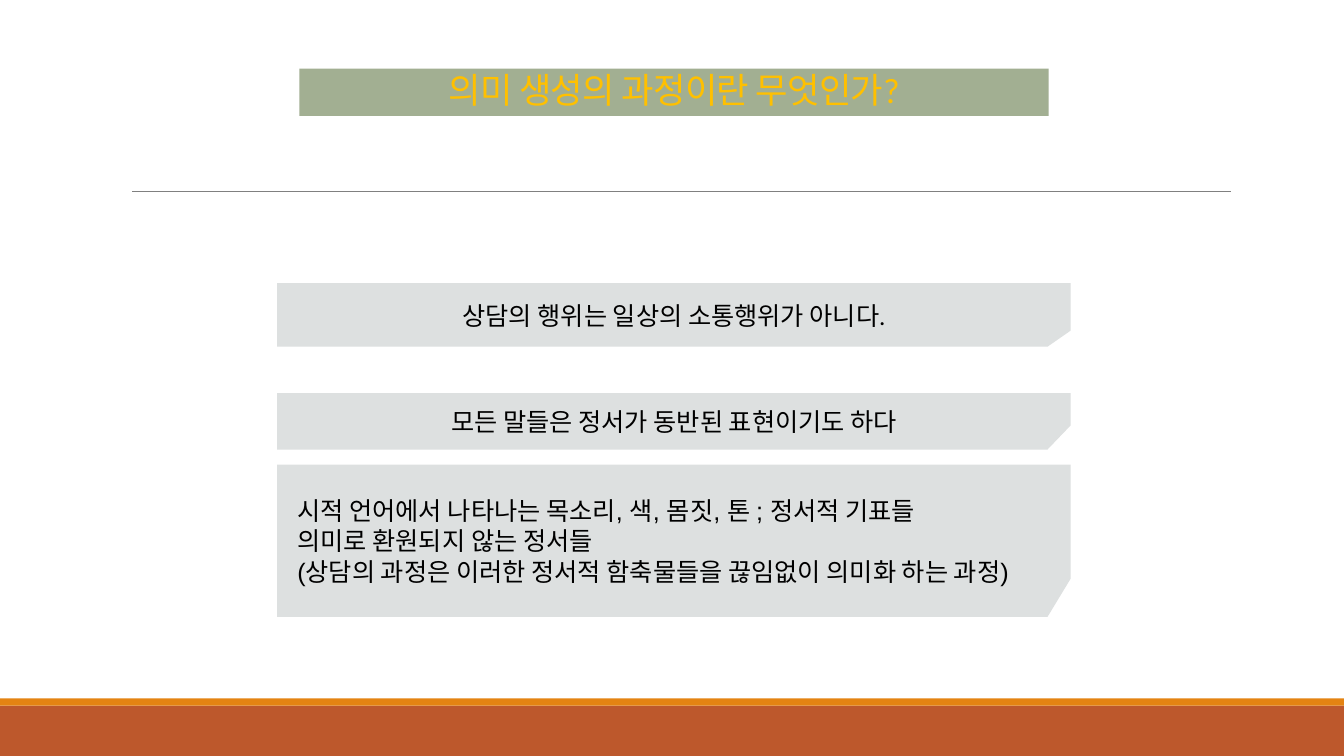
from pptx import Presentation
from pptx.dml.color import RGBColor
from pptx.enum.shapes import MSO_CONNECTOR, MSO_SHAPE
from pptx.enum.text import MSO_ANCHOR, MSO_AUTO_SIZE, PP_ALIGN
from pptx.oxml.ns import qn
from pptx.util import Inches, Pt
from lxml import etree

RECTANGLE = MSO_SHAPE.RECTANGLE
STRAIGHT = MSO_CONNECTOR.STRAIGHT
LEFT, CENTER = PP_ALIGN.LEFT, PP_ALIGN.CENTER
MIDDLE, BOTTOM = MSO_ANCHOR.MIDDLE, MSO_ANCHOR.BOTTOM
NO_AUTOFIT = MSO_AUTO_SIZE.NONE

COLORS = {
    "footer": "BD582C",
    "accent": "E48312",
    "rule": "808080",
    "title_fill": "A2AF92",
    "title_text": "FFC000",
    "panel": "DDE0E0",
    "text": "000000",
}
SLIDE_WIDTH, SLIDE_HEIGHT = 13.33, 7.5
PANEL_LEFT, PANEL_WIDTH, CORNER_WIDTH = 2.75, 7.87, 0.23

# Top, height, corner height, alignment, font, text
PANELS = [
    (2.81, 0.63, 0.16, CENTER, "Calibri", "상담의 행위는 일상의 소통행위가 아니다."),
    (3.9, 0.56, 0.24, CENTER, "Calibri", "모든 말들은 정서가 동반된 표현이기도 하다"),
    (4.61, 1.51, 0.38, LEFT, "Arial",
     "시적 언어에서 나타나는 목소리, 색, 몸짓, 톤 ; 정서적 기표들\n"
     "의미로 환원되지 않는 정서들\n"
     "(상담의 과정은 이러한 정서적 함축물들을 끊임없이 의미화 하는 과정)"),
]


def color(name):
    return RGBColor.from_string(COLORS[name])


def fill_plain(shape, name):
    shape.fill.solid()
    shape.fill.fore_color.rgb = color(name)
    shape.line.fill.background()
    shape.shadow.inherit = False


def write_text(shape, text, font_name, size, color_name, alignment, anchor, insets):
    frame = shape.text_frame
    frame.text = text
    frame.word_wrap = True
    frame.auto_size = NO_AUTOFIT
    frame.vertical_anchor = anchor
    frame.margin_left = frame.margin_right = Inches(insets[0])
    frame.margin_top = frame.margin_bottom = Inches(insets[1])
    for paragraph in frame.paragraphs:
        paragraph.alignment = alignment
        for run in paragraph.runs:
            run.font.name = font_name
            run.font.size = Pt(size)
            run.font.color.rgb = color(color_name)


def add_footer(slide, top, height, accent_height):
    bands = [(top, height, "footer"), (top - accent_height, accent_height, "accent")]
    for band_top, band_height, name in bands:
        band = slide.shapes.add_shape(
            RECTANGLE, 0, Inches(band_top), Inches(SLIDE_WIDTH), Inches(band_height))
        fill_plain(band, name)


def add_rule(slide, left, top, width):
    rule = slide.shapes.add_connector(
        STRAIGHT, Inches(left), Inches(top), Inches(left + width), Inches(top))
    rule.line.color.rgb = color("rule")
    rule.line.width = Pt(0.5)
    etree.SubElement(rule._element.spPr, qn("a:effectLst"))


def add_title(slide, left, top, width, height, text):
    title = slide.shapes.title
    title.left, title.top = Inches(left), Inches(top)
    title.width, title.height = Inches(width), Inches(height)
    title.fill.solid()
    title.fill.fore_color.rgb = color("title_fill")
    write_text(title, text, "Calibri", 25.2, "title_text", CENTER, BOTTOM, (0.1, 0.05))
    paragraph = title.text_frame.paragraphs[0]
    paragraph.line_spacing = 0.85
    # Letter spacing in hundredths of a point
    paragraph.runs[0].font._element.set("spc", "-50")


def add_panel(slide, left, top, width, height, corner, alignment, font_name, text):
    # Rectangle with its lower right corner cut off
    right, bottom = left + width, top + height
    outline = [
        (left, top),
        (left, bottom),
        (right - CORNER_WIDTH, bottom),
        (right, bottom - corner),
    ]
    builder = slide.shapes.build_freeform(Inches(right), Inches(top))
    builder.add_line_segments([(Inches(x), Inches(y)) for x, y in outline], close=True)
    panel = builder.convert_to_shape()
    fill_plain(panel, "panel")
    write_text(panel, text, font_name, 18, "text", alignment, MIDDLE, (0.2, 0))


def main():
    presentation = Presentation()
    presentation.slide_width = Inches(SLIDE_WIDTH)
    presentation.slide_height = Inches(SLIDE_HEIGHT)
    slide = presentation.slides.add_slide(presentation.slide_layouts[5])

    # Frame of the slide
    add_footer(slide, 7, 0.5, 0.07)
    add_rule(slide, 1.31, 1.9, 10.9)

    # Title and statements
    add_title(slide, 2.97, 0.68, 7.43, 0.47, "의미 생성의 과정이란 무엇인가?")
    for top, height, corner, alignment, font_name, text in PANELS:
        add_panel(slide, PANEL_LEFT, top, PANEL_WIDTH, height,
                  corner, alignment, font_name, text)

    presentation.save("out.pptx")


if __name__ == "__main__":
    main()
